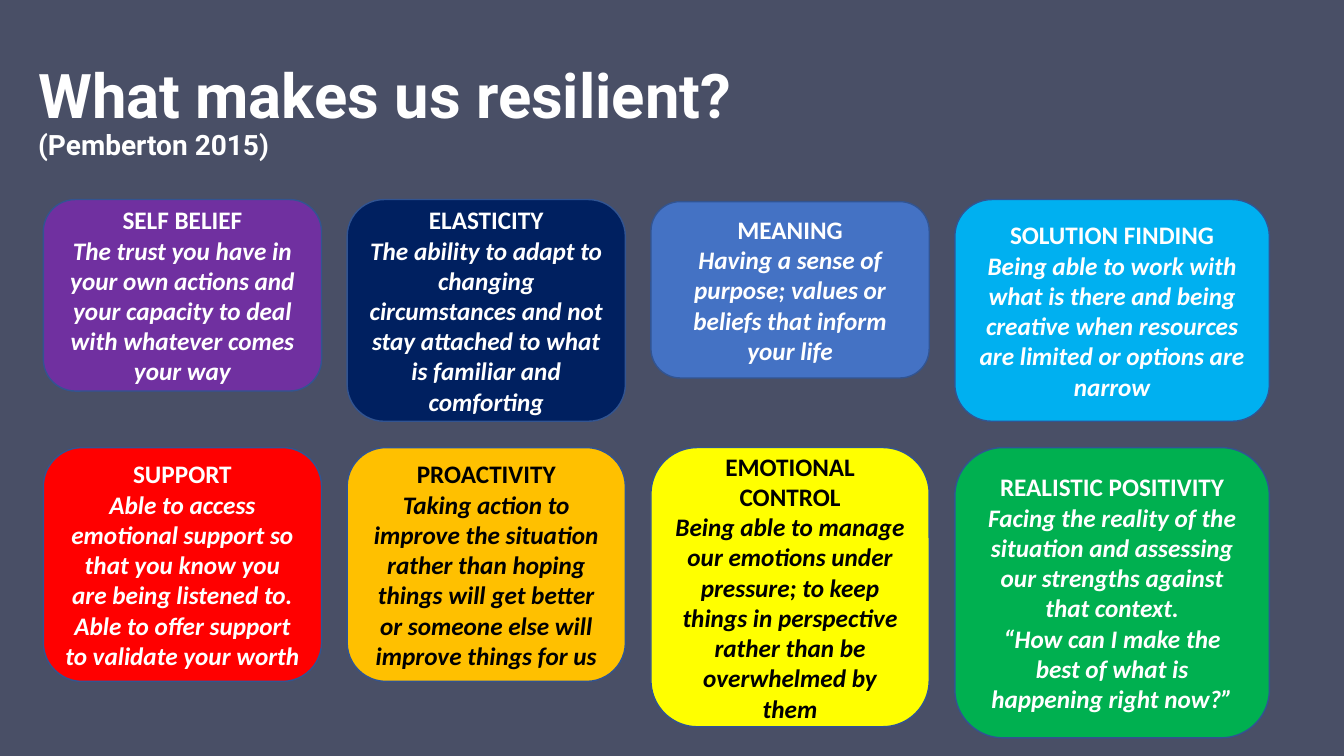
from pptx import Presentation
from pptx.dml.color import RGBColor
from pptx.enum.shapes import MSO_SHAPE
from pptx.enum.text import MSO_ANCHOR, PP_ALIGN
from pptx.util import Inches, Pt

COLORS = {
    "back": "494F66", "edge": "325491", "white": "FFFFFF", "black": "000000",
    "purple": "7030A0", "navy": "002060", "blue": "4472C4", "sky": "00B0F0",
    "red": "FF0000", "amber": "FFC000", "yellow": "FFFF00", "green": "00B050",
}

# Grid: first column, column step, top of each row, width of each column
LEFT, STEP = 0.43, 9.04 / 3
TOPS = [1.98, 4.44]
WIDTHS = [2.76, 2.76, 2.76, 3.12]

# Each card: fill, text colour, height, drop below the row top, heading, body
ROWS = [
    [
        ("purple", "white", 1.9, 0, "SELF BELIEF",
         ["The trust you have in your own actions and your capacity to deal "
          "with whatever comes your way"]),
        ("navy", "white", 2.2, 0, "ELASTICITY",
         ["The ability to adapt to changing circumstances and not stay "
          "attached to what is familiar and comforting"]),
        ("blue", "white", 1.75, 0.02, "MEANING",
         ["Having a sense of purpose; values or beliefs that inform your life"]),
        ("sky", "white", 2.2, 0, "SOLUTION FINDING",
         ["Being able to work with what is there and being creative when "
          "resources are limited or options are narrow"]),
    ],
    [
        ("red", "white", 2.32, 0, "SUPPORT",
         ["Able to access emotional support so that you know you are being "
          "listened to. Able to offer support to validate your worth"]),
        ("amber", "black", 2.32, 0, "PROACTIVITY",
         ["Taking action to improve the situation rather than hoping things "
          "will get better or someone else will improve things for us"]),
        ("yellow", "black", 2.77, 0, "EMOTIONAL CONTROL",
         ["Being able to manage our emotions under pressure; to keep things "
          "in perspective rather than be overwhelmed by them"]),
        ("green", "white", 2.88, 0, "REALISTIC POSITIVITY",
         ["Facing the reality of the situation and assessing our strengths "
          "against that context.",
          "“How can I make the best of what is happening right now?”"]),
    ],
]


def color(name):
    return RGBColor.from_string(COLORS[name])


def add_run(para, text, ink, **form):
    run = para.add_run()
    run.text = text
    for key, value in form.items():
        setattr(run.font, key, value)
    run.font.color.rgb = color(ink)


def set_frame(frame):
    frame.word_wrap = True
    frame.vertical_anchor = MSO_ANCHOR.MIDDLE


def add_title(slide, box):
    frame = slide.shapes.add_textbox(*map(Inches, box)).text_frame
    set_frame(frame)
    para = frame.paragraphs[0]
    para.line_spacing = 0.9
    form = {"name": "Roboto", "bold": True}
    add_run(para, "What makes us resilient?", "white", size=Pt(44), **form)
    para.add_line_break()
    add_run(para, "(Pemberton 2015)", "white", size=Pt(20), **form)


def add_card(slide, box, fill, ink, head, body):
    card = slide.shapes.add_shape(MSO_SHAPE.ROUNDED_RECTANGLE, *map(Inches, box))
    card.shadow.inherit = False
    card.fill.solid()
    card.fill.fore_color.rgb = color(fill)
    card.line.color.rgb = color("edge")
    card.line.width = Pt(1)
    frame = card.text_frame
    set_frame(frame)
    form = {"name": "Calibri", "size": Pt(18), "bold": True}
    for i, text in enumerate([head, *body]):
        para = frame.add_paragraph() if i else frame.paragraphs[0]
        para.alignment = PP_ALIGN.CENTER
        add_run(para, text, ink, italic=i > 0, **form)


def add_grid(slide):
    for top, row in zip(TOPS, ROWS):
        for col, (fill, ink, height, drop, head, body) in enumerate(row):
            box = (LEFT + col * STEP, top + drop, WIDTHS[col], height)
            add_card(slide, box, fill, ink, head, body)


def main():
    deck = Presentation()
    deck.slide_width, deck.slide_height = Inches(13.33), Inches(7.5)
    slide = deck.slides.add_slide(deck.slide_layouts[6])
    slide.background.fill.solid()
    slide.background.fill.fore_color.rgb = color("back")
    add_title(slide, (0.28, 0.4, 12.14, 1.45))
    add_grid(slide)
    deck.save("out.pptx")


if __name__ == "__main__":
    main()
